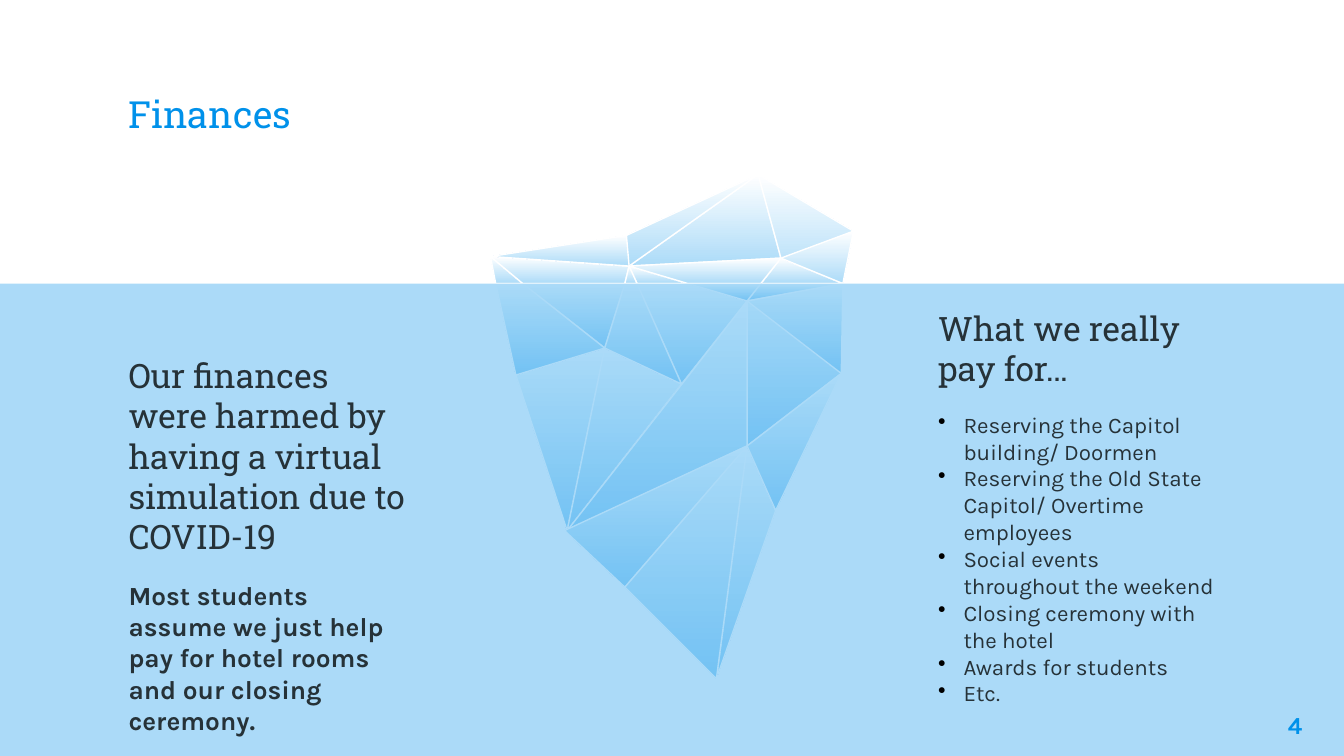
from dataclasses import dataclass

from lxml import etree
from pptx import Presentation
from pptx import util as u
from pptx.dml import color
from pptx.enum import shapes, text
from pptx.oxml import ns


@dataclass(frozen=True)
class Theme:
    blue: color.RGBColor = color.RGBColor.from_string("0091EA")
    ink: color.RGBColor = color.RGBColor.from_string("263238")
    white: color.RGBColor = color.RGBColor.from_string("FFFFFF")
    ice: color.RGBColor = color.RGBColor.from_string("ACDBF8")
    heading_font: str = "Roboto Slab"
    body_font: str = "Karla"
    title: u.Pt = u.Pt(20)
    heading: u.Pt = u.Pt(18)
    body: u.Pt = u.Pt(14)
    number: u.Pt = u.Pt(13)
    item: u.Pt = u.Pt(12)
    gap: u.Pt = u.Pt(12)


theme = Theme()


def add_text_frame(left, top, width, height, inset):
    box = slide.shapes.add_textbox(u.Cm(left), u.Cm(top), u.Cm(width), u.Cm(height))
    frame = box.text_frame
    frame.word_wrap = True
    frame.margin_top = frame.margin_bottom = u.Cm(inset)
    return frame


def style(paragraph, words, font_name, size, font_color, bold=False):
    paragraph.text = words
    paragraph.font.name = font_name
    paragraph.font.size = size
    paragraph.font.color.rgb = font_color
    paragraph.font.bold = bold


presentation = Presentation()
presentation.slide_width = u.Cm(25.4)
presentation.slide_height = u.Cm(14.29)
slide = presentation.slides.add_slide(presentation.slide_layouts[6])

waterline = 5.36
points = {
    "peak": (14.33, 3.3),
    "shoulder": (11.84, 4.45),
    "east": (16.13, 4.37),
    "west": (9.27, 4.85),
    "ridge": (14.76, 4.88),
    "saddle": (11.89, 5.03),
    "w1": (9.37, waterline),
    "w2": (9.88, waterline),
    "w3": (11.81, waterline),
    "w4": (12.04, waterline),
    "w5": (13, waterline),
    "w6": (14.38, waterline),
    "w7": (15.93, waterline),
    "hub": (14.12, 5.69),
    "inner": (11.43, 6.58),
    "right": (15.9, 7.06),
    "left": (9.75, 7.09),
    "middle": (12.88, 7.26),
    "core": (14.12, 8.43),
    "low_right": (14.66, 9.65),
    "low_left": (10.72, 10.03),
    "corner": (10.67, 10.03),
    "keel": (11.81, 11.1),
    "tip": (13.54, 12.83),
}
facets = [
    "w7 west w2",
    "peak saddle ridge",
    "peak east w7 ridge",
    "west w2 w1",
    "saddle w3 w2 west",
    "peak saddle west shoulder",
    "ridge w7 w6",
    "w4 saddle w5",
    "shoulder saddle west",
    "east ridge w7",
    "w4 saddle w3",
    "w7 right core hub",
    "inner low_left left",
    "w3 inner w2",
    "core low_right tip",
    "w7 hub w6",
    "middle w4 w5 hub",
    "middle inner low_left",
    "hub low_left core",
    "w2 inner left w1",
    "w7 hub right",
    "inner middle w4 w3",
    "corner core keel",
    "keel tip core",
    "right low_right core",
    "saddle ridge w6 w5",
    "hub w6 w5",
]
iceberg = slide.shapes.add_group_shape()
for facet in facets:
    start, *others = [(u.Cm(x), u.Cm(y)) for x, y in map(points.get, facet.split())]
    builder = iceberg.shapes.build_freeform(*start)
    builder.add_line_segments(others, close=True)
    shape = builder.convert_to_shape()
    shape.shadow.inherit = False
    shape.fill.gradient()
    shape.fill.gradient_angle = 270
    for stop, stop_color in zip(shape.fill.gradient_stops, (theme.white, theme.ice)):
        stop.color.rgb = stop_color
    shape.line.color.rgb = theme.white
    shape.line.width = u.Pt(0.75)

frame = add_text_frame(2.18, 0.86, 21.03, 1.96, 0.25)
frame.vertical_anchor = text.MSO_ANCHOR.BOTTOM
style(frame.paragraphs[0], "Finances", theme.heading_font, theme.title, theme.blue)

sea = slide.shapes.add_shape(
    shapes.MSO_SHAPE.RECTANGLE, 0, u.Cm(waterline), u.Cm(25.4), u.Cm(14.29 - waterline)
)
sea.shadow.inherit = False
sea.fill.solid()
sea.fill.fore_color.rgb = theme.blue
sea.line.fill.background()
sea_color = sea.fill._xPr.find(".//" + ns.qn("a:srgbClr"))
etree.SubElement(sea_color, ns.qn("a:alpha"), val="33000")

frame = add_text_frame(2.18, 6.58, 5.84, 6.73, 0.13)
style(
    frame.paragraphs[0],
    "Our finances were harmed by having a virtual simulation due to COVID-19",
    theme.heading_font, theme.heading, theme.ink,
)
paragraph = frame.add_paragraph()
paragraph.space_before = theme.gap
style(
    paragraph,
    "Most students assume we just help pay for hotel rooms and our closing ceremony.",
    theme.body_font, theme.body, theme.ink, bold=True,
)

frame = add_text_frame(17.48, 5.69, 5.84, 8.33, 0.13)
style(
    frame.paragraphs[0], "What we really pay for…",
    theme.heading_font, theme.heading, theme.ink,
)
costs = [
    "Reserving the Capitol building/ Doormen",
    "Reserving the Old State Capitol/ Overtime employees",
    "Social events throughout the weekend",
    "Closing ceremony with the hotel",
    "Awards for students",
    "Etc.",
]
for index, cost in enumerate(costs):
    paragraph = frame.add_paragraph()
    properties = paragraph._p.get_or_add_pPr()
    properties.set("marL", str(u.Cm(0.48)))
    properties.set("indent", str(-u.Cm(0.48)))
    bullet_color = etree.SubElement(properties, ns.qn("a:buClr"))
    etree.SubElement(bullet_color, ns.qn("a:srgbClr"), val="000000")
    etree.SubElement(properties, ns.qn("a:buChar"), char="•")
    paragraph.space_before = theme.gap if index == 0 else u.Pt(0)
    style(paragraph, cost, theme.body_font, theme.item, theme.ink)

frame = add_text_frame(23.34, 13.18, 1.52, 1.09, 0.25)
paragraph = frame.paragraphs[0]
paragraph.alignment = text.PP_ALIGN.RIGHT
style(paragraph, "4", theme.body_font, theme.number, theme.blue, bold=True)

presentation.save("out.pptx")
